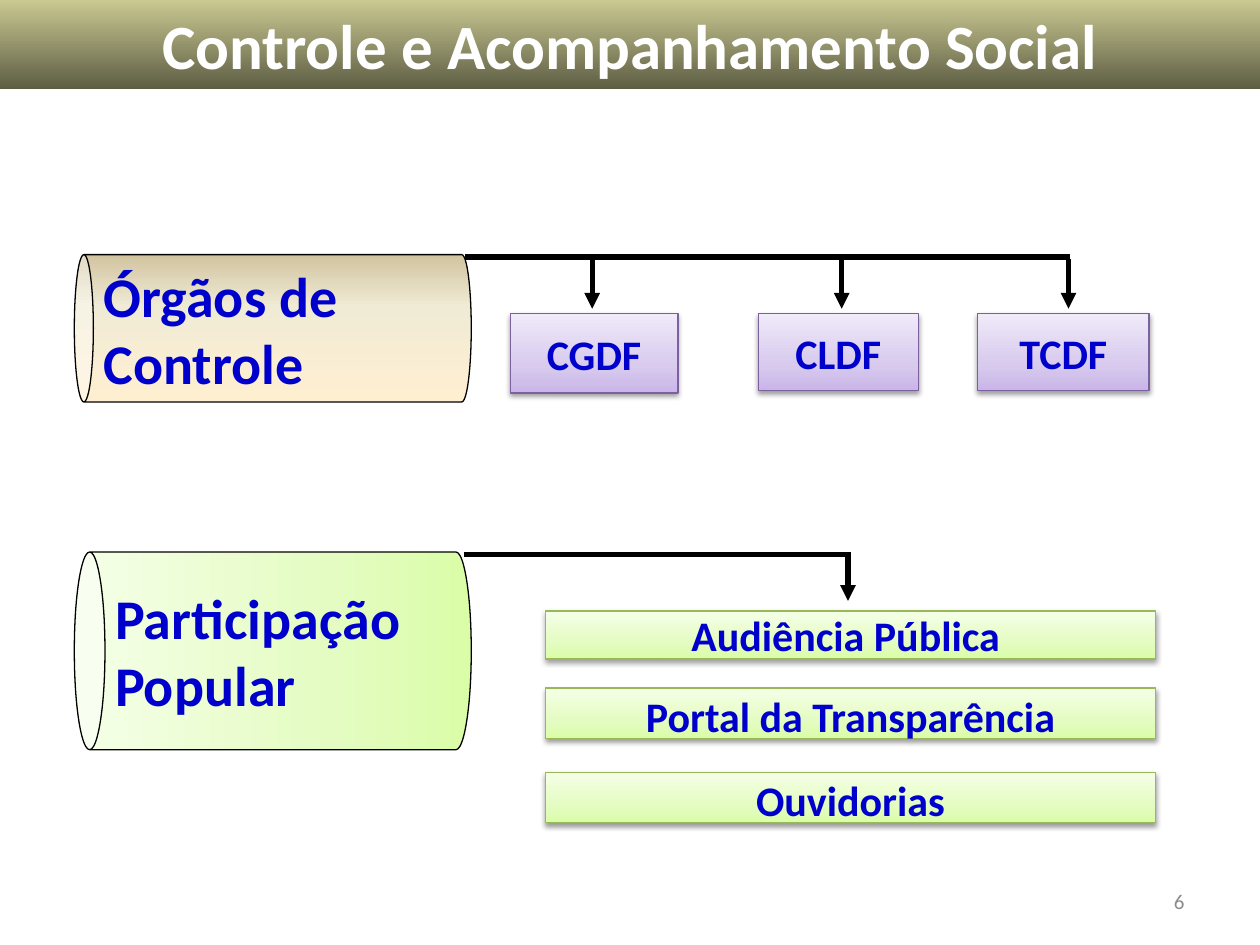
from copy import deepcopy

from lxml.etree import SubElement
from pptx import Presentation
from pptx.dml.color import RGBColor
from pptx.enum.shapes import MSO_CONNECTOR, MSO_SHAPE
from pptx.enum.text import MSO_ANCHOR, PP_ALIGN
from pptx.oxml.ns import qn
from pptx.util import Pt

BLACK = RGBColor(0x00, 0x00, 0x00)
WHITE = RGBColor(0xFF, 0xFF, 0xFF)
BLUE = RGBColor(0x00, 0x00, 0xCC)
GREY = RGBColor(0x8C, 0x8C, 0x8C)
PURPLE_LINE = RGBColor(0x7D, 0x60, 0xA0)
GREEN_LINE = RGBColor(0x98, 0xB9, 0x55)
SAND = [(0, RGBColor(0xFF, 0xEF, 0xD1)), (0.65, RGBColor(0xF0, 0xEB, 0xD5)), (1, RGBColor(0xD1, 0xC3, 0x9F))]
PURPLE = [(0, RGBColor(0xC9, 0xB5, 0xE8)), (0.35, RGBColor(0xD8, 0xCB, 0xEE)), (1, RGBColor(0xF0, 0xEA, 0xF9))]
GREEN = [(0, RGBColor(0xDA, 0xFD, 0xA7)), (0.35, RGBColor(0xE4, 0xFC, 0xC2)), (1, RGBColor(0xF5, 0xFF, 0xE7))]
OLIVE = [(0, RGBColor(0xCA, 0xC9, 0x92)), (1, RGBColor(0x5D, 0x5D, 0x44))]


def write(shape, text, size, color, bold, align):
    frame = shape.text_frame
    frame.word_wrap = True
    frame.vertical_anchor = MSO_ANCHOR.MIDDLE
    para = frame.paragraphs[0]
    para.alignment = align
    span = para.add_run()
    span.text = text
    for name, value in {"name": "Calibri", "size": Pt(size), "bold": bold}.items():
        setattr(span.font, name, value)
    span.font.color.rgb = color


def add_box(kind, place, stops, angle, line):
    shape = page.shapes.add_shape(kind, *map(Pt, place))
    shape.shadow.inherit = False
    shape.fill.gradient()
    shape.fill.gradient_angle = angle
    stop_list = shape.element.spPr.find(".//" + qn("a:gsLst"))
    if len(stops) == 3:
        stop_list.append(deepcopy(stop_list[0]))
    for stop, (position, color) in zip(shape.fill.gradient_stops, stops):
        stop.position = position
        stop.color.rgb = color
    if line is None:
        shape.line.fill.background()
    else:
        shape.line.color.rgb = line
        shape.line.width = Pt(0.75)
    return shape


deck = Presentation()
deck.slide_width, deck.slide_height = Pt(720), Pt(540)
page = deck.slides.add_slide(deck.slide_layouts[6])

cans = [
    ("Órgãos de Controle", (113.8, 74.2, 84.2, 226.8), 0.129, SAND, 0),
    ("Participação Popular", (99.4, 258.5, 113, 226.8), 0.155, GREEN, 90),
]
for text, place, cap, stops, angle in cans:
    can = add_box(MSO_SHAPE.CAN, place, stops, angle, BLACK)
    can.rotation = 270
    can.adjustments[0] = cap
    write(can, text, 32, BLUE, True, PP_ALIGN.LEFT)
    margins = {"margin_left": 5.76, "margin_top": 5.76, "margin_right": 5.76, "margin_bottom": 0}
    for name, value in margins.items():
        setattr(can.text_frame, name, Pt(value))
    can.text_frame._txBody.bodyPr.set("vert", "eaVert")

boxes = [
    ("CGDF", (291.6, 179.3, 95.8, 45.4), PURPLE, PURPLE_LINE, 3.6),
    ("CLDF", (433.4, 179.3, 91.4, 43.9), PURPLE, PURPLE_LINE, 3.6),
    ("TCDF", (558.7, 179.3, 97.9, 43.9), PURPLE, PURPLE_LINE, 3.6),
    ("Audiência Pública ", (311.8, 349.2, 348.5, 27.4), GREEN, GREEN_LINE, 3.6),
    ("Portal da Transparência", (311.8, 393.1, 348.5, 28.8), GREEN, GREEN_LINE, 6.4),
    ("Ouvidorias", (311.8, 441.4, 348.5, 28.8), GREEN, GREEN_LINE, 6.4),
]
for text, place, stops, line, top in boxes:
    box = add_box(MSO_SHAPE.RECTANGLE, place, stops, 90, line)
    write(box, text, 24, BLUE, True, PP_ALIGN.CENTER)
    box.text_frame.margin_top = Pt(top)
    effects = box.element.spPr.find(qn("a:effectLst"))
    shadow = SubElement(effects, qn("a:outerShdw"), blurRad=str(Pt(3.1)), dist=str(Pt(1.6)),
                        dir="5400000", rotWithShape="0")
    tone = SubElement(shadow, qn("a:srgbClr"), val="000000")
    SubElement(tone, qn("a:alpha"), val="38000")

lines = [
    ((265.7, 146.9, 611.3, 146.9), False),
    ((338.4, 148.3, 338.4, 176.4), True),
    ((481, 148.3, 481, 176.4), True),
    ((610.6, 148.3, 610.6, 176.4), True),
    ((265, 316.8, 486, 316.8), False),
    ((484.6, 315.4, 484.6, 343.4), True),
]
for ends, arrow in lines:
    connector = page.shapes.add_connector(MSO_CONNECTOR.STRAIGHT, *map(Pt, ends))
    connector.line.color.rgb = BLACK
    connector.line.width = Pt(3)
    if arrow:
        SubElement(connector.line._get_or_add_ln(), qn("a:tailEnd"), type="triangle")
    SubElement(connector.element.spPr, qn("a:effectLst"))

title = add_box(MSO_SHAPE.RECTANGLE, (0, 0, 720, 51.1), OLIVE, 270, None)
write(title, "Controle e Acompanhamento Social", 36, WHITE, True, PP_ALIGN.CENTER)

number = page.shapes.add_textbox(Pt(516.2), Pt(500.4), Pt(167.8), Pt(28.8))
write(number, "6", 12, GREY, False, PP_ALIGN.RIGHT)

deck.save("out.pptx")
